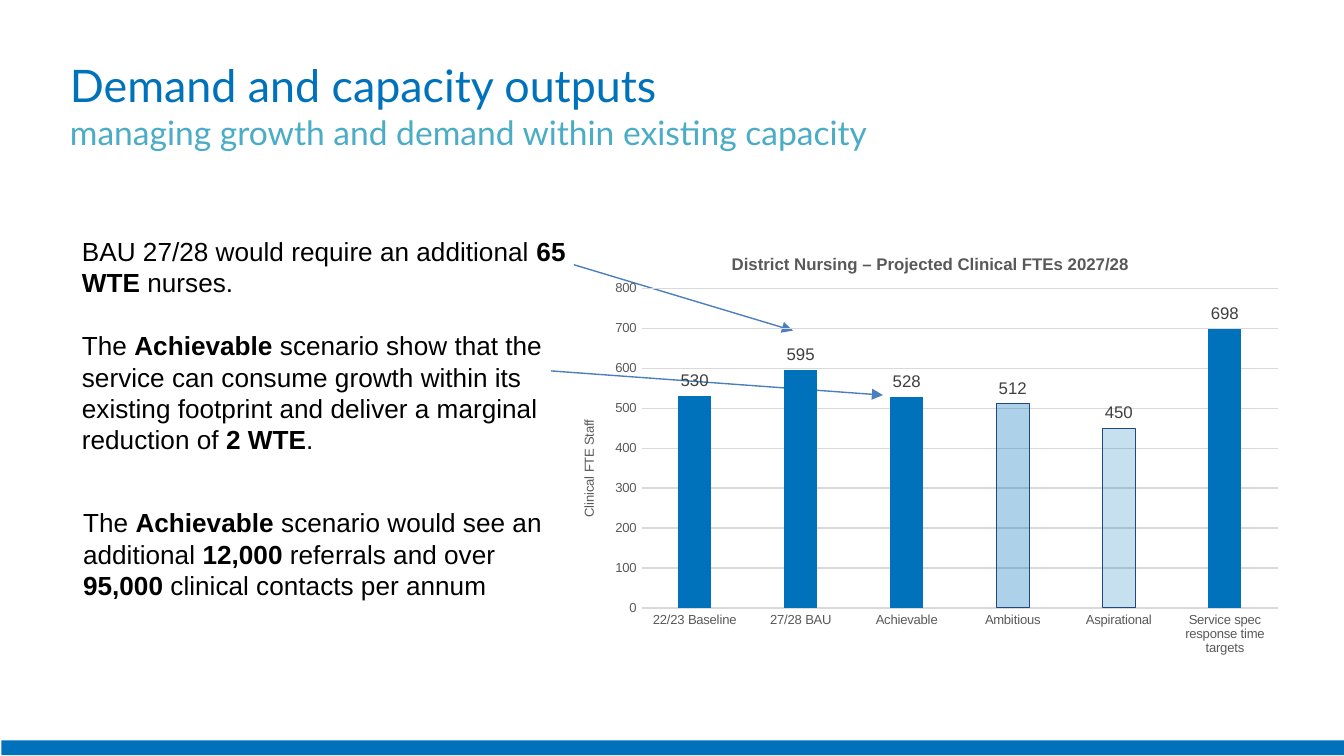
from dataclasses import dataclass
from lxml import etree
from pptx import Presentation
from pptx.chart.data import CategoryChartData as ChartData
from pptx.dml.color import RGBColor as RGB
from pptx.enum.chart import XL_CHART_TYPE as Kind, XL_LABEL_POSITION as Pos, XL_TICK_MARK as Tick
from pptx.enum.shapes import MSO_CONNECTOR as Link, MSO_SHAPE as Shape
from pptx.enum.text import MSO_ANCHOR as Anchor, MSO_AUTO_SIZE as Fit, PP_ALIGN as Align
from pptx.oxml import parse_xml
from pptx.oxml.ns import nsdecls, qn
from pptx.util import Inches, Pt


@dataclass(frozen=True)
class Theme:
    blue: RGB = RGB.from_string("0072BC")
    teal: RGB = RGB.from_string("4BACC6")
    arrow: RGB = RGB.from_string("4B7EBC")
    edge: RGB = RGB.from_string("1F497D")
    black: RGB = RGB.from_string("000000")
    white: RGB = RGB.from_string("FFFFFF")
    grey: RGB = RGB.from_string("595959")
    dark: RGB = RGB.from_string("404040")
    grid: RGB = RGB.from_string("D9D9D9")
    head: str = "Lato"
    body: str = "Arial"
    title: int = 24
    sub: int = 18
    text: int = 14
    label: int = 9
    axis: int = 7


T = Theme()


def style(font, size, color, name=T.body, bold=False):
    font.size, font.name, font.bold = Pt(size), name, bold
    font.color.rgb = color


def place(shape, box):
    shape.left, shape.top, shape.width, shape.height = map(Inches, box)


def stroke(line, color, width=0.75):
    line.color.rgb = color
    line.width = Pt(width)


def block(slide, box, fill):
    shape = slide.shapes.add_shape(Shape.RECTANGLE, *map(Inches, box))
    shape.shadow.inherit = False
    shape.fill.solid()
    shape.fill.fore_color.rgb = fill
    shape.line.fill.background()
    return shape


def inset(frame, pad):
    frame.margin_left = frame.margin_right = Inches(pad)
    frame.margin_top = frame.margin_bottom = Inches(pad / 2)
    frame.word_wrap = True
    frame.auto_size = Fit.NONE
    frame.vertical_anchor = Anchor.TOP


def heading(slide, box, main, sub):
    title = slide.shapes.title
    place(title, box)
    frame = title.text_frame
    inset(frame, 0)
    frame.text = f"{main}\v{sub}"
    para = frame.paragraphs[0]
    para.alignment = Align.LEFT
    style(para.runs[0].font, T.title, T.blue, T.head)
    style(para.runs[1].font, T.sub, T.teal, T.head)


def note(slide, box, lines, pad=0):
    """Write one paragraph per line; words between asterisks are bold."""
    shape = block(slide, box, T.white)
    if pad:
        stroke(shape.line, T.white)
    frame = shape.text_frame
    inset(frame, pad)
    for i, line in enumerate(lines):
        para = frame.add_paragraph() if i else frame.paragraphs[0]
        para.alignment = Align.LEFT
        para.space_before = Pt(17 if i else 0)
        for j, part in enumerate(line.split("*")):
            run = para.add_run()
            run.text = part
            style(run.font, T.text, T.black, bold=j % 2 == 1)


def arrow(slide, start, end):
    link = slide.shapes.add_connector(Link.STRAIGHT, *map(Inches, start + end))
    stroke(link.line, T.arrow)
    etree.SubElement(link.line._get_or_add_ln(), qn("a:tailEnd"), type="triangle")
    etree.SubElement(link._element.spPr, qn("a:effectLst"))


def caption(frame, text, size, bold=False):
    frame.text = text
    style(frame.paragraphs[0].runs[0].font, size, T.grey, bold=bold)


def pin(chart, x, y, w, h):
    """Fix the inner plot area, in fractions of the chart."""
    plot = chart._chartSpace.chart.plotArea
    for old in plot.findall(qn("c:layout")):
        plot.remove(old)
    sizes = "".join(f'<c:{k} val="{v}"/>' for k, v in zip("xywh", (x, y, w, h)))
    plot.insert(0, parse_xml(
        f'<c:layout {nsdecls("c")}><c:manualLayout><c:layoutTarget val="inner"/>'
        f'<c:xMode val="edge"/><c:yMode val="edge"/>{sizes}</c:manualLayout></c:layout>'))


def staff(slide, box, rows, pale):
    data = ChartData(number_format="0")
    data.categories = list(rows)
    data.add_series("Series 1", list(rows.values()))
    chart = slide.shapes.add_chart(Kind.COLUMN_CLUSTERED, *map(Inches, box), data).chart
    style(chart.font, T.axis, T.black)
    chart.has_legend = False
    caption(chart.chart_title.text_frame,
            "District Nursing – Projected Clinical FTEs 2027/28", T.label, True)
    chart.chart_title.include_in_layout = False
    pin(chart, 0.107, 0.124, 0.867, 0.725)

    # Axes
    cat, val = chart.category_axis, chart.value_axis
    for axis in (cat, val):
        axis.major_tick_mark = axis.minor_tick_mark = Tick.NONE
        style(axis.tick_labels.font, T.axis, T.grey)
    val.minimum_scale, val.maximum_scale, val.major_unit = 0, 800, 100
    val.format.line.fill.background()
    caption(val.axis_title.text_frame, "Clinical FTE Staff", T.axis)
    for part in (cat, val.major_gridlines):
        stroke(part.format.line, T.grid)

    # Columns and labels
    plot = chart.plots[0]
    plot.gap_width, plot.overlap, plot.vary_by_categories = 219, -27, False
    bars = plot.series[0]
    bars.format.fill.solid()
    bars.format.fill.fore_color.rgb = T.blue
    labels = bars.data_labels
    labels.show_value, labels.position = True, Pos.OUTSIDE_END
    labels.number_format, labels.number_format_is_linked = "0", False
    style(labels.font, T.label, T.dark)

    # Translucent columns
    for i, share in pale.items():
        form = bars.points[i].format
        form.fill.solid()
        form.fill.fore_color.rgb = T.blue
        stroke(form.line, T.edge, 0.5)
        color = form.fill._xPr.find(qn("a:solidFill"))[0]
        etree.SubElement(color, qn("a:alpha"), val=str(share * 1000))


def main():
    deck = Presentation()
    deck.slide_width = Inches(10)
    deck.slide_height = deck.slide_width * 9 // 16
    slide = deck.slides.add_slide(deck.slide_layouts[5])

    # Footer bar and heading
    block(slide, (0.01, 5.51, 9.99, 0.11), T.blue)
    heading(slide, (0.52, 0.43, 8.97, 0.71), "Demand and capacity outputs ",
            "managing growth and demand within existing capacity")

    # Findings
    note(slide, (0.52, 3.72, 3.66, 0.81), [
        "The *Achievable *scenario would see an additional *12,000* referrals "
        "and over *95,000* clinical contacts per annum"], 0.1)
    note(slide, (0.61, 1.75, 3.66, 1.65), [
        "BAU 27/28 would require an additional *65 WTE *nurses.",
        "The *Achievable* scenario show that the service can consume growth within "
        "its existing footprint and deliver a marginal reduction of *2 WTE*."])

    # Pointers to the columns, then the chart
    arrow(slide, (4.27, 1.97), (5.9, 2.46))
    arrow(slide, (4.1, 2.76), (6.57, 2.94))
    staff(slide, (4.19, 1.74, 5.46, 3.28), {
        "22/23 Baseline": 530, "27/28 BAU": 595, "Achievable": 528,
        "Ambitious": 512, "Aspirational": 450,
        "Service spec response time targets": 698}, {3: 32, 4: 22})

    deck.save("out.pptx")


if __name__ == "__main__":
    main()
